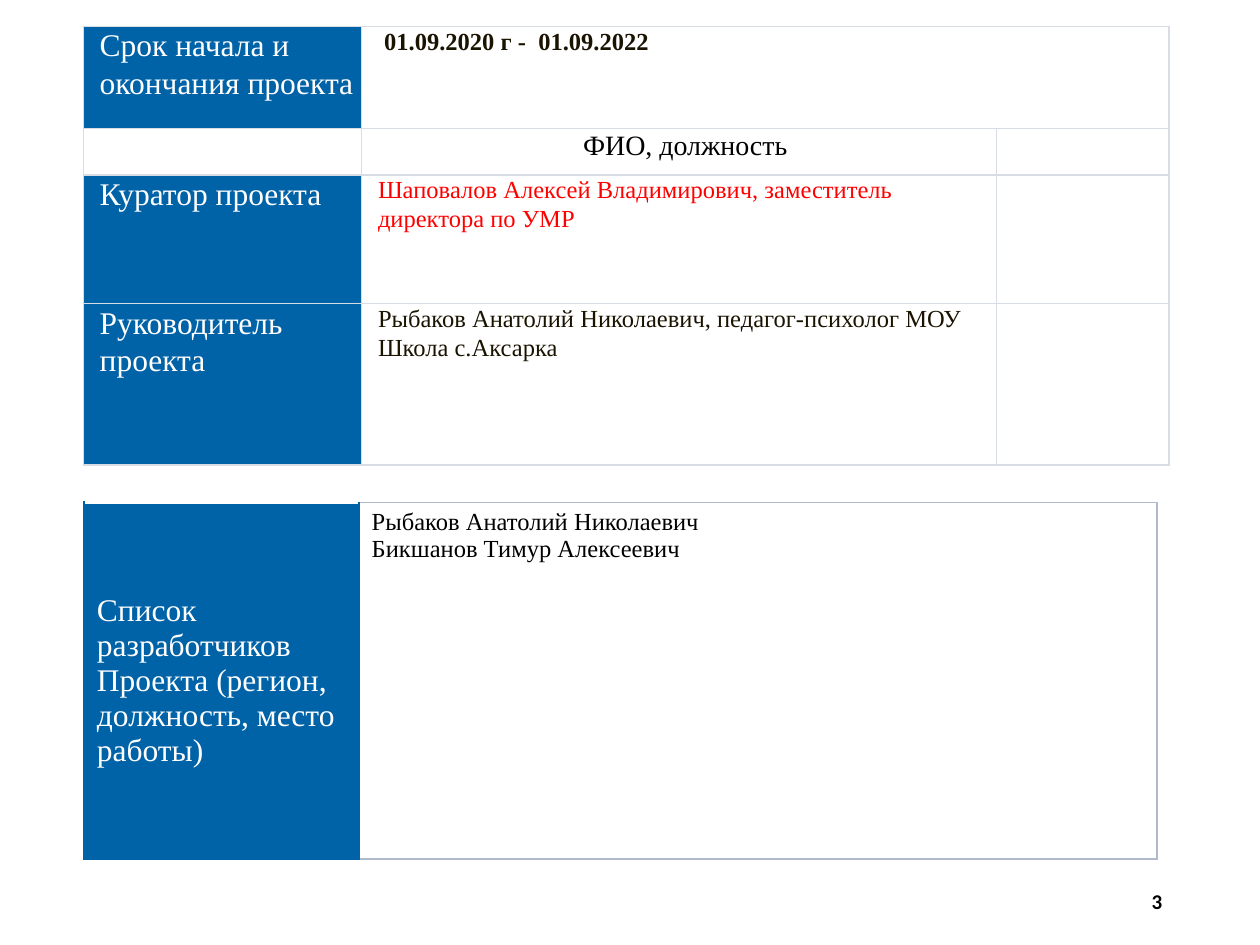
from lxml import etree
from pptx import Presentation
from pptx.dml.color import RGBColor
from pptx.enum.text import MSO_ANCHOR, PP_ALIGN
from pptx.oxml.ns import qn
from pptx.util import Cm, Pt

MIDDLE, TOP = MSO_ANCHOR.MIDDLE, MSO_ANCHOR.TOP
CENTER, RIGHT = PP_ALIGN.CENTER, PP_ALIGN.RIGHT

SERIF = "Times New Roman"
BLUE, WHITE, BLACK = "0062A7", "FFFFFF", "000000"
DARK, RED = "1A1300", "FF0000"
PALE, GREY = "D8DCE5", "B0B9CB"

# text, size, colour of each cell in the upper table
TERMS = [
    [("Срок начала и окончания проекта", 18, WHITE),
     (" 01.09.2020 г -  01.09.2022", 14, DARK)],
    [None, ("ФИО, должность", 16, BLACK)],
    [("Куратор проекта", 18, WHITE),
     ("Шаповалов Алексей Владимирович, заместитель директора по УМР", 14, RED)],
    [("Руководитель проекта", 18, WHITE),
     ("Рыбаков Анатолий Николаевич, педагог-психолог МОУ Школа с.Аксарка", 14, DARK)],
]
TEAM_HEAD = "Список разработчиков\nПроекта (регион,  должность, место работы)"
TEAM = "Рыбаков Анатолий Николаевич\nБикшанов Тимур Алексеевич"


def color(code):
    return RGBColor.from_string(code)


def put_text(frame, text, size, code, font=SERIF, bold=False):
    frame.text = text
    for para in frame.paragraphs:
        for run in para.runs:
            run.font.name = font
            run.font.size = Pt(size)
            run.font.bold = bold
            run.font.color.rgb = color(code)


def fill_cell(cell, code):
    cell.fill.solid()
    cell.fill.fore_color.rgb = color(code)


def edge_cell(cell, edges):
    """Draw the borders given as (colour, points) for left, right, top, bottom."""
    props = cell._tc.get_or_add_tcPr()
    for index, (side, (code, width)) in enumerate(zip("LRTB", edges)):
        line = etree.Element(qn(f"a:ln{side}"), w=str(Pt(width)))
        solid = etree.SubElement(line, qn("a:solidFill"))
        etree.SubElement(solid, qn("a:srgbClr"), val=code)
        props.insert(index, line)


def add_grid(slide, left, top, cols, rows):
    frame = slide.shapes.add_table(len(rows), len(cols), Cm(left), Cm(top),
                                   Cm(sum(cols)), Cm(sum(rows)))
    table = frame.table
    table.first_row = table.horz_banding = False
    for col, width in zip(table.columns, cols):
        col.width = Cm(width)
    for row, height in zip(table.rows, rows):
        row.height = Cm(height)
    return table


def indent(cell):
    """Give a cell of the upper table its narrow margins and hanging space."""
    cell.margin_left = cell.margin_right = Cm(0.08)
    cell.margin_top = cell.margin_bottom = 0
    for para in cell.text_frame.paragraphs:
        para.line_spacing = 1.07
        props = para._p.get_or_add_pPr()
        props.set("marL", str(Cm(0.25)))
        props.set("indent", "0")


def add_terms(slide):
    table = add_grid(slide, 1.68, 0.53, [5.61, 12.8, 3.48], [2.06, 0.94, 2.59, 3.25])
    for cell in table.iter_cells():
        fill_cell(cell, WHITE)
        edge_cell(cell, [(PALE, 1)] * 4)
    for r, row in enumerate(TERMS):
        for c, entry in enumerate(row):
            cell = table.cell(r, c)
            if entry:
                put_text(cell.text_frame, *entry, bold=(r, c) == (0, 1))
                if c == 0:
                    fill_cell(cell, BLUE)
    for cell in table.iter_cells():
        indent(cell)
    table.cell(1, 1).text_frame.paragraphs[0].alignment = CENTER
    table.cell(0, 1).merge(table.cell(0, 2))


def add_team(slide):
    table = add_grid(slide, 1.7, 10.13, [5.54, 16.08], [7.19])
    head, body = table.cell(0, 0), table.cell(0, 1)
    put_text(head.text_frame, TEAM_HEAD, 18, WHITE)
    put_text(body.text_frame, TEAM, 14, BLACK)
    head.vertical_anchor, body.vertical_anchor = MIDDLE, TOP
    fill_cell(head, BLUE)
    fill_cell(body, WHITE)
    edge_cell(head, [(BLUE, 1.5), (BLUE, 1), (WHITE, 1.5), (BLUE, 1.5)])
    edge_cell(body, [(BLUE, 1)] + [(GREY, 1)] * 3)


def add_number(slide):
    box = slide.shapes.add_textbox(Cm(17.96), Cm(17.65), Cm(5.72), Cm(1.02))
    frame = box.text_frame
    frame.word_wrap = True
    frame.vertical_anchor = MIDDLE
    put_text(frame, "3", 12, BLACK, "Calibri", True)
    frame.paragraphs[0].alignment = RIGHT


def main():
    deck = Presentation()
    deck.slide_width, deck.slide_height = Cm(25.4), Cm(19.05)
    slide = deck.slides.add_slide(deck.slide_layouts[6])
    add_number(slide)
    add_terms(slide)
    add_team(slide)
    deck.save("out.pptx")


if __name__ == "__main__":
    main()
